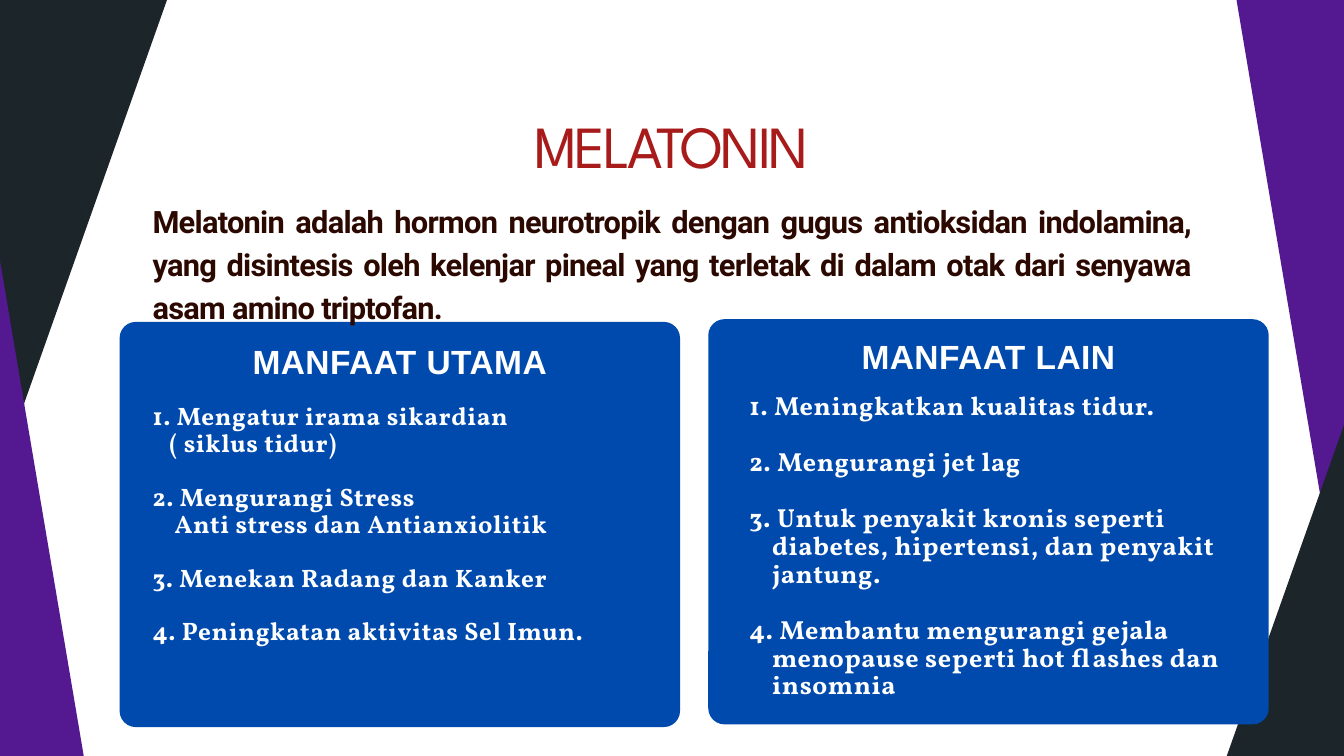
"""Build the slide on melatonin and its benefits."""
from pptx import Presentation
from pptx.dml.color import RGBColor
from pptx.enum.shapes import MSO_SHAPE
from pptx.enum.text import PP_ALIGN
from pptx.util import Inches, Pt

THEME = {
    "purple": RGBColor.from_string("541990"),
    "dark": RGBColor.from_string("1C2529"),
    "card": RGBColor.from_string("004AAD"),
    "title": {"font": "League Spartan", "size": 64, "color": "A81B1B", "bold": False, "tracking": -320, "leading": 64},
    "intro": {"font": "Roboto", "size": 33, "color": "2B0901", "bold": True, "tracking": -80, "leading": 46.2},
    "heading": {"font": "Arial", "size": 35.9, "color": "FFFFFF", "bold": True, "tracking": 50, "leading": 43.1},
    "main_list": {"font": "Vollkorn", "size": 27, "color": "FFFFFF", "bold": True, "tracking": 70, "leading": 28.9},
    "other_list": {"font": "Vollkorn", "size": 28, "color": "FFFFFF", "bold": True, "tracking": 70, "leading": 29.9},
}

presentation = Presentation()
presentation.slide_width = Inches(20)
presentation.slide_height = Inches(11.25)
slide = presentation.slides.add_slide(presentation.slide_layouts[6])


def add_block(kind, box, color, rotation=0):
    shape = slide.shapes.add_shape(kind, *map(Inches, box))
    shape.shadow.inherit = False
    shape.fill.solid()
    shape.fill.fore_color.rgb = color
    shape.line.fill.background()
    shape.rotation = rotation
    return shape


def add_text(box, style, items, alignment=PP_ALIGN.LEFT):
    frame = slide.shapes.add_textbox(*map(Inches, box)).text_frame
    frame_format = {"word_wrap": True, "margin_left": 0, "margin_right": 0, "margin_top": 0, "margin_bottom": 0}
    for name, value in frame_format.items():
        setattr(frame, name, value)
    for index, (text, hanging) in enumerate(items):
        paragraph = frame.add_paragraph() if index else frame.paragraphs[0]
        paragraph.text = text
        paragraph_format = {
            "alignment": alignment,
            "line_spacing": Pt(style["leading"]),
            "space_before": Pt(style["leading"] if index else 0),
        }
        for name, value in paragraph_format.items():
            setattr(paragraph, name, value)
        if hanging:
            properties = paragraph._p.get_or_add_pPr()
            properties.set("marL", str(Inches(hanging)))
            properties.set("indent", str(-Inches(hanging)))
        for run in paragraph.runs:
            font_format = {"name": style["font"], "size": Pt(style["size"]), "bold": style["bold"]}
            for name, value in font_format.items():
                setattr(run.font, name, value)
            run.font.color.rgb = RGBColor.from_string(style["color"])
            run._r.get_or_add_rPr().set("spc", str(style["tracking"]))


bands = [
    (15.34, 2.37, "purple", 260.4),
    (15.5, 6, "dark", 289.5),
    (-8.15, 2.5, "dark", 109.5),
    (-7.99, 6.13, "purple", 80.4),
]
for left, top, color, rotation in bands:
    add_block(MSO_SHAPE.RECTANGLE, (left, top, 12.65, 4.84), THEME[color], rotation)

for left, top in [(1.78, 4.79), (10.54, 4.75)]:
    card = add_block(MSO_SHAPE.ROUNDED_RECTANGLE, (left, top, 8.34, 6.03), THEME["card"])
    card.adjustments[0] = 0.04

add_text((2.57, 1.79, 14.85, 0.93), THEME["title"], [("MELATONIN", 0)], PP_ALIGN.CENTER)
introduction = (
    "Melatonin adalah hormon neurotropik dengan gugus antioksidan indolamina, "
    "yang disintesis oleh kelenjar pineal yang terletak di dalam otak dari senyawa "
    "asam amino triptofan."
)
add_text((2.27, 2.92, 15.46, 1.89), THEME["intro"], [(introduction, 0)], PP_ALIGN.JUSTIFY)

main_benefits = [
    ("1. Mengatur irama sikardian\v( siklus tidur)", 0.25),
    ("2. Mengurangi Stress\vAnti stress dan Antianxiolitik", 0.33),
    ("3. Menekan Radang dan Kanker", 0),
    ("4. Peningkatan aktivitas Sel Imun.", 0),
]
other_benefits = [
    ("1. Meningkatkan kualitas tidur.", 0),
    ("2. Mengurangi jet lag", 0),
    ("3. Untuk penyakit kronis seperti\vdiabetes, hipertensi, dan penyakit\vjantung.", 0.34),
    ("4. Membantu mengurangi gejala\vmenopause seperti hot flashes dan\vinsomnia", 0.34),
]
add_text((2.27, 6, 7.73, 3.57), THEME["main_list"], main_benefits)
add_text((11.15, 5.85, 7.73, 4.48), THEME["other_list"], other_benefits)

for left, top, heading in [(2.27, 5.08, "MANFAAT UTAMA"), (11.03, 5, "MANFAAT LAIN")]:
    add_text((left, top, 7.36, 0.63), THEME["heading"], [(heading, 0)], PP_ALIGN.CENTER)

presentation.save("out.pptx")
